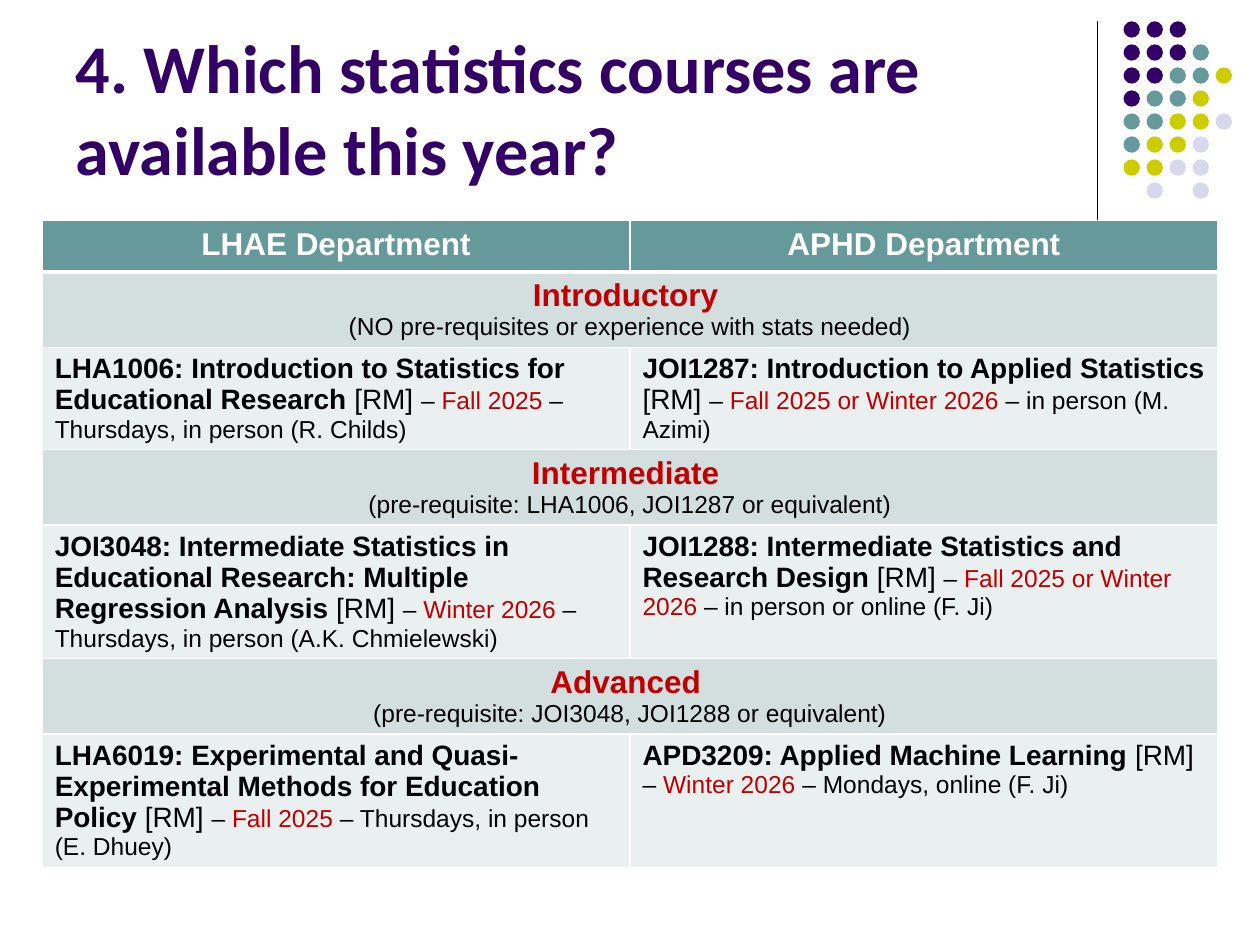
import pptx
import pptx.util
import pptx.dml.color
import pptx.enum.shapes
import pptx.enum.text
import pptx.oxml
import pptx.oxml.ns
from pptx.util import Cm

PURPLE, TEAL, OLIVE, LILAC = "330066", "669999", "CCCC00", "D8D8EC"
BLACK, WHITE, RED = "000000", "FFFFFF", "C00000"
BAND, PALE = "D3DEDE", "EAEFEF"
CENTER = pptx.enum.text.PP_ALIGN.CENTER

DOT_ROWS = ["PPP", "PPPT", "PPTTO", "PTTO", "TTOOL", "TOOL", "OOLL", " L L"]
DOT_COLORS = {"P": PURPLE, "T": TEAL, "O": OLIVE, "L": LILAC}

DEPARTMENTS = ["LHAE Department", "APHD Department"]
LEVELS = [
    ("Introductory ", "(NO pre-requisites or experience with stats needed)", 2.06, [
        ("LHA1006: Introduction to Statistics for Educational Research ",
         "Fall 2025 ", "– Thursdays, in person (R. Childs)"),
        ("JOI1287: Introduction to Applied Statistics ",
         "Fall 2025 or Winter 2026 ", "– in person (M. Azimi)")]),
    ("Intermediate ", "(pre-requisite: LHA1006, JOI1287 or equivalent)", 2.68, [
        ("JOI3048: Intermediate Statistics in Educational Research: Multiple Regression Analysis ",
         "Winter 2026 ", "– Thursdays, in person (A.K. Chmielewski)"),
        ("JOI1288: Intermediate Statistics and Research Design ",
         "Fall 2025 or Winter 2026 ", "– in person or online (F. Ji)")]),
    ("Advanced ", "(pre-requisite: JOI3048, JOI1288 or equivalent)", 2.68, [
        ("LHA6019: Experimental and Quasi-Experimental Methods for Education Policy ",
         "Fall 2025 ", "– Thursdays, in person (E. Dhuey)"),
        ("APD3209: Applied Machine Learning ",
         "Winter 2026 ", "– Mondays, online (F. Ji)")]),
]


def color(value):
    return pptx.dml.color.RGBColor.from_string(value)


def add_span(para, text, size, ink=BLACK, bold=False, face="Arial"):
    span = para.add_run()
    span.text = text
    span.font.name = face
    span.font.size = pptx.util.Pt(size)
    span.font.bold = bold
    span.font.color.rgb = color(ink)


def place_title(page, left, top, width, height):
    title = page.shapes.title
    title.left, title.top, title.width, title.height = Cm(left), Cm(top), Cm(width), Cm(height)
    frame = title.text_frame
    frame.word_wrap = True
    frame.auto_size = pptx.enum.text.MSO_AUTO_SIZE.NONE
    frame.vertical_anchor = pptx.enum.text.MSO_ANCHOR.BOTTOM
    para = frame.paragraphs[0]
    para.alignment = pptx.enum.text.PP_ALIGN.LEFT
    add_span(para, "4. Which statistics courses are available this year?",
             39, PURPLE, True, "Calibri")


def place_ornament(page, left, top, height):
    rule = page.shapes.add_connector(pptx.enum.shapes.MSO_CONNECTOR.STRAIGHT,
                                     Cm(left), Cm(top), Cm(left), Cm(top + height))
    rule.line.color.rgb = color(BLACK)
    rule.line.width = pptx.util.Pt(0.75)
    properties = rule.element.find(pptx.oxml.ns.qn("p:spPr"))
    properties.append(pptx.oxml.parse_xml(f"<a:effectLst {pptx.oxml.ns.nsdecls('a')}/>"))

    pitch, size, gap = 0.464, 0.33, 0.53
    group = page.shapes.add_group_shape()
    for row, letters in enumerate(DOT_ROWS):
        for column, letter in enumerate(letters):
            if letter == " ":
                continue
            dot = group.shapes.add_shape(pptx.enum.shapes.MSO_SHAPE.OVAL,
                                         Cm(left + gap + column * pitch), Cm(top + row * pitch),
                                         Cm(size), Cm(size))
            dot.shadow.inherit = False
            dot.fill.solid()
            dot.fill.fore_color.rgb = color(DOT_COLORS[letter])
            dot.line.fill.background()


def style_cell(cell, fill, top=1, bottom=1):
    properties = cell._tc.get_or_add_tcPr()
    for side, points in (("L", 1), ("R", 1), ("T", top), ("B", bottom)):
        properties.append(pptx.oxml.parse_xml(
            f'<a:ln{side} {pptx.oxml.ns.nsdecls("a")} w="{pptx.util.Pt(points)}">'
            f'<a:solidFill><a:srgbClr val="{WHITE}"/></a:solidFill></a:ln{side}>'))
    cell.fill.solid()
    cell.fill.fore_color.rgb = color(fill)


def fill_level(cells, name, requirement, top):
    for cell in cells:
        style_cell(cell, BAND, top=top)
    cells[0].merge(cells[1])
    frame = cells[0].text_frame
    heading, note = frame.paragraphs[0], frame.add_paragraph()
    heading.alignment = note.alignment = CENTER
    add_span(heading, name, 18, RED, True)
    add_span(note, requirement, 14)


def fill_course(cell, name, term, details):
    style_cell(cell, PALE)
    para = cell.text_frame.paragraphs[0]
    add_span(para, name, 16, bold=True)
    add_span(para, "[RM] ", 16)
    add_span(para, "– ", 14)
    add_span(para, term, 14, RED)
    add_span(para, details, 14)


def place_courses(page, left, top, width):
    heights = [1.03]
    for level in LEVELS:
        heights += [1.52, level[2]]
    table = page.shapes.add_table(len(heights), len(DEPARTMENTS), Cm(left), Cm(top),
                                  Cm(width), Cm(sum(heights))).table
    for column in table.columns:
        column.width = Cm(width / len(DEPARTMENTS))
    for row, height in zip(table.rows, heights):
        row.height = Cm(height)

    for column, department in enumerate(DEPARTMENTS):
        cell = table.cell(0, column)
        style_cell(cell, TEAL, bottom=3)
        para = cell.text_frame.paragraphs[0]
        para.alignment = CENTER
        add_span(para, department, 18, WHITE, True)
    for index, (name, requirement, _, courses) in enumerate(LEVELS):
        row = 1 + 2 * index
        fill_level([table.cell(row, column) for column in range(2)],
                   name, requirement, top=3 if index == 0 else 1)
        for column, course in enumerate(courses):
            fill_course(table.cell(row + 1, column), *course)


def main():
    deck = pptx.Presentation()
    deck.slide_width, deck.slide_height = Cm(25.4), Cm(19.05)
    page = deck.slides.add_slide(deck.slide_layouts[5])
    place_ornament(page, 22.12, 0.43, 4.22)
    place_courses(page, 0.85, 4.45, 23.7)
    place_title(page, 1.27, 0.33, 20.95, 3.61)
    deck.save("out.pptx")


if __name__ == "__main__":
    main()
